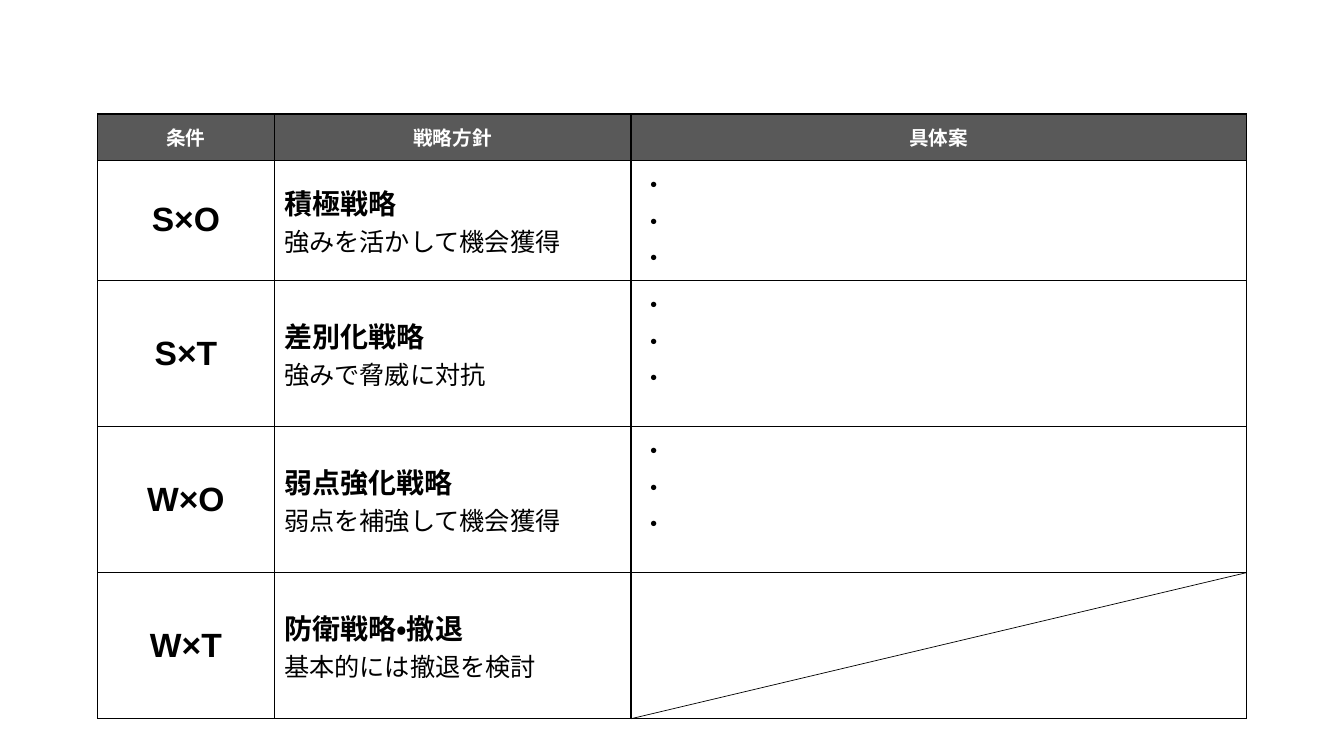
from lxml.etree import SubElement
from pptx import Presentation
from pptx.dml.color import RGBColor
from pptx.enum.lang import MSO_LANGUAGE_ID as Language
from pptx.enum.shapes import MSO_CONNECTOR as Connector
from pptx.enum.text import MSO_ANCHOR as Anchor, PP_ALIGN as Align
from pptx.oxml.ns import qn
from pptx.util import Pt

COLORS = {"header": "595959", "white": "FFFFFF", "black": "000000"}
LEFT, TOP = 69.8, 81.4
WIDTHS = [126, 254.9, 439.9]
HEIGHTS = [33.1, 85.7, 104.4, 104.4, 104.4]
HEADERS = ["条件", "戦略方針", "具体案"]
STRATEGIES = [
    ("S×O", "積極戦略", "強みを活かして機会獲得", 3),
    ("S×T", "差別化戦略", "強みで脅威に対抗", 3),
    ("W×O", "弱点強化戦略", "弱点を補強して機会獲得", 3),
    ("W×T", "防衛戦略・撤退", "基本的には撤退を検討", 0),
]


def style_cell(cell, fill=None):
    properties = cell._tc.get_or_add_tcPr()
    for side in ("lnL", "lnR", "lnT", "lnB"):
        border = SubElement(properties, qn(f"a:{side}"), w=str(Pt(1)))
        solid = SubElement(border, qn("a:solidFill"))
        SubElement(solid, qn("a:srgbClr"), val=COLORS["black"])
    if fill:
        cell.fill.solid()
        cell.fill.fore_color.rgb = RGBColor.from_string(COLORS[fill])
    else:
        cell.fill.background()


def write_cell(cell, lines, color="black", align=Align.LEFT, anchor=Anchor.MIDDLE):
    cell.vertical_anchor = anchor
    cell.text_frame.text = "\n".join(text for text, size, bold in lines)
    for para, (text, size, bold) in zip(cell.text_frame.paragraphs, lines):
        para.alignment = align
        for span in para.runs:
            span.font.name = "Arial"
            span.font.size = Pt(size)
            span.font.bold = bold
            span.font.language_id = Language.JAPANESE
            span.font.color.rgb = RGBColor.from_string(COLORS[color])


deck = Presentation()
deck.slide_width, deck.slide_height = Pt(960), Pt(540)
page = deck.slides.add_slide(deck.slide_layouts[6])

table = page.shapes.add_table(
    len(HEIGHTS), len(WIDTHS), Pt(LEFT), Pt(TOP), Pt(sum(WIDTHS)), Pt(sum(HEIGHTS))
).table
table.first_row = table.horz_banding = False
for column, width in zip(table.columns, WIDTHS):
    column.width = Pt(width)
for row, height in zip(table.rows, HEIGHTS):
    row.height = Pt(height)

for index, header in enumerate(HEADERS):
    cell = table.cell(0, index)
    style_cell(cell, "header")
    write_cell(cell, [(header, 14, True)], "white", Align.CENTER)

for index, (condition, policy, detail, ideas) in enumerate(STRATEGIES, 1):
    condition_cell, policy_cell, ideas_cell = table.rows[index].cells
    for cell in (condition_cell, policy_cell, ideas_cell):
        style_cell(cell)
    write_cell(condition_cell, [(condition, 24, True)], align=Align.CENTER)
    write_cell(policy_cell, [(policy, 20, True), (detail, 18, False)])
    write_cell(ideas_cell, [("・", 18, False)] * ideas, anchor=Anchor.TOP)

right, bottom = LEFT + sum(WIDTHS), TOP + sum(HEIGHTS)
diagonal = page.shapes.add_connector(
    Connector.STRAIGHT,
    Pt(right - WIDTHS[-1]), Pt(bottom), Pt(right), Pt(bottom - HEIGHTS[-1]),
)
diagonal.line.width = Pt(0.5)
diagonal.line.color.rgb = RGBColor.from_string(COLORS["black"])
SubElement(diagonal._element.spPr, qn("a:effectLst"))

deck.save("out.pptx")
